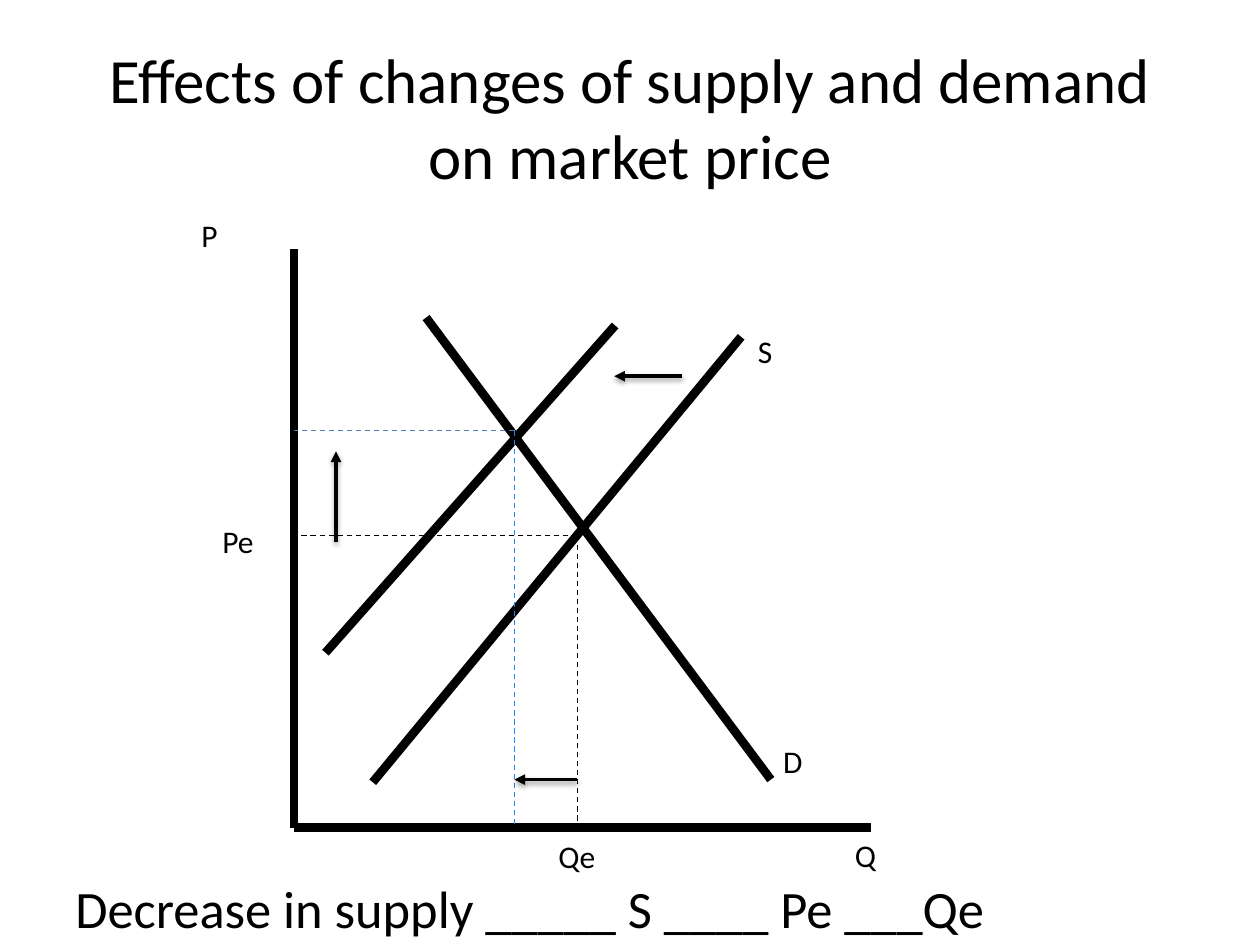
from lxml import etree
from pptx import Presentation
from pptx.dml.color import RGBColor
from pptx.enum.dml import MSO_LINE
from pptx.enum.shapes import MSO_CONNECTOR
from pptx.enum.text import MSO_ANCHOR, PP_ALIGN
from pptx.oxml.ns import qn
from pptx.util import Pt

STRAIGHT = MSO_CONNECTOR.STRAIGHT
DASH = MSO_LINE.DASH
TOP, MIDDLE = MSO_ANCHOR.TOP, MSO_ANCHOR.MIDDLE
LEFT, CENTER = PP_ALIGN.LEFT, PP_ALIGN.CENTER

BLACK, BLUE = "000000", "4B7EBC"
FONT = "Calibri"
TITLE = "Effects of changes of supply and demand on market price"
QUESTION = "Decrease in supply _____ S ____ Pe ___Qe"

ORIGIN_X, ORIGIN_Y = 168, 473
OLD_QUANTITY, NEW_QUANTITY = 330, 294
OLD_PRICE, NEW_PRICE = 306, 246

AXES_AND_CURVES = [
    (ORIGIN_X, 142.5, ORIGIN_X, ORIGIN_Y),
    (498, ORIGIN_Y, ORIGIN_X, ORIGIN_Y),
    (423.5, 192.5, 213, 447),
    (243.5, 181.5, 440.5, 445.5),
    (351.5, 186, 186, 373),
]
EQUILIBRIA = [
    (OLD_QUANTITY, OLD_PRICE, BLACK),
    (NEW_QUANTITY, NEW_PRICE, BLUE),
]
SHIFT_ARROWS = [
    (390, 215, 351, 215),
    (192, 309.5, 192, 258),
    (OLD_QUANTITY, 445.5, NEW_QUANTITY, 445.5),
]
LABELS = [
    ("P", 108, 120),
    ("Q", 481.5, 474),
    ("D", 440.5, 420.5),
    ("S", 426, 186),
    ("Pe", 120, 294.5),
    ("Qe", 312, 475),
]


def color(value):
    return RGBColor.from_string(value)


def add_text(slide, text, left, top, width, height, size, align=LEFT, anchor=TOP):
    box = slide.shapes.add_textbox(Pt(left), Pt(top), Pt(width), Pt(height))
    frame = box.text_frame
    frame.word_wrap = True
    frame.vertical_anchor = anchor
    paragraph = frame.paragraphs[0]
    paragraph.text = text
    paragraph.alignment = align
    paragraph.font.name = FONT
    paragraph.font.size = Pt(size)
    paragraph.font.color.rgb = color(BLACK)


def add_line(slide, ends, width, line_color=BLACK, dash=None):
    connector = slide.shapes.add_connector(STRAIGHT, *map(Pt, ends))
    connector.line.width = Pt(width)
    connector.line.color.rgb = color(line_color)
    if dash is not None:
        connector.line.dash_style = dash
    effects = etree.SubElement(connector._element.spPr, qn("a:effectLst"))
    return connector, effects


def add_arrow(slide, ends):
    connector, effects = add_line(slide, ends, 2)
    etree.SubElement(connector.line._get_or_add_ln(), qn("a:tailEnd"), type="triangle")
    shadow = etree.SubElement(
        effects, qn("a:outerShdw"), blurRad=str(Pt(3.1)), dist=str(Pt(1.6)),
        dir="5400000", rotWithShape="0")
    shade = etree.SubElement(shadow, qn("a:srgbClr"), val=BLACK)
    etree.SubElement(shade, qn("a:alpha"), val="38000")


def main():
    presentation = Presentation()
    presentation.slide_width, presentation.slide_height = Pt(720), Pt(540)
    slide = presentation.slides.add_slide(presentation.slide_layouts[6])

    add_text(slide, TITLE, 36, 21.6, 648, 90, 36, CENTER, MIDDLE)
    for ends in AXES_AND_CURVES:
        add_line(slide, ends, 5)
    add_text(slide, QUESTION, 36, 497, 684, 43, 30)
    for text, left, top in LABELS:
        add_text(slide, text, left, top, 72, 29, 18)
    for quantity, price, line_color in EQUILIBRIA:
        add_line(slide, (quantity, price, ORIGIN_X, price), 0.75, line_color, DASH)
        add_line(slide, (quantity, price, quantity, ORIGIN_Y), 0.75, line_color, DASH)
    for ends in SHIFT_ARROWS:
        add_arrow(slide, ends)

    presentation.save("out.pptx")


if __name__ == "__main__":
    main()
